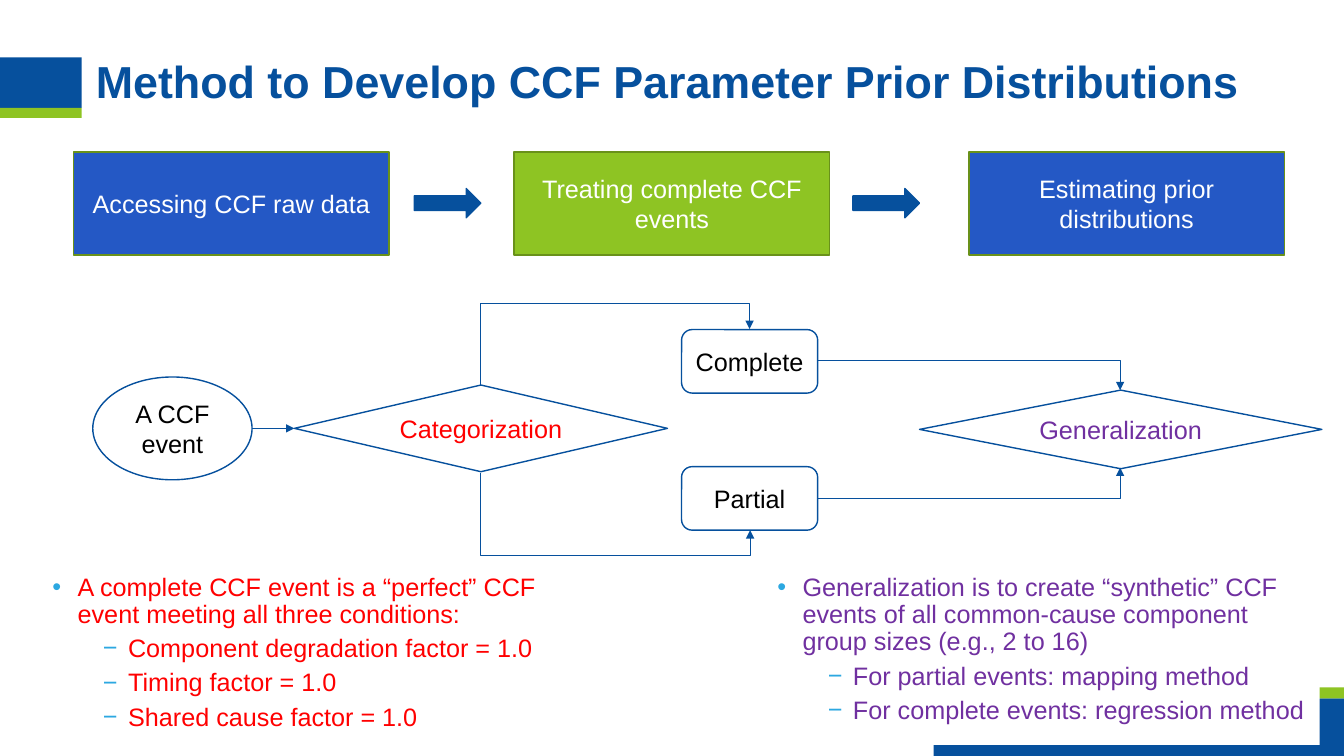
from lxml.etree import SubElement
from pptx import Presentation
from pptx.dml.color import RGBColor
from pptx.enum.shapes import MSO_CONNECTOR, MSO_SHAPE
from pptx.enum.text import MSO_ANCHOR, PP_ALIGN
from pptx.oxml.ns import qn
from pptx.util import Inches, Pt

BLUE, GREEN, ROYAL, OLIVE = "06509D", "8EC423", "2458C5", "69911A"
RED, PURPLE, BLACK, WHITE, SKY = "FF0000", "7030A0", "000000", "FFFFFF", "2CA8E1"


def rgb(color):
    return RGBColor.from_string(color)


def write(p, text, color, size=18, bold=False):
    r = p.add_run()
    r.text = text
    for name, value in {"name": "Arial", "size": Pt(size), "bold": bold}.items():
        setattr(r.font, name, value)
    r.font.color.rgb = rgb(color)


prs = Presentation()
prs.slide_width, prs.slide_height = Inches(13.33), Inches(7.5)
s = prs.slides.add_slide(prs.slide_layouts[1])
title, body = s.placeholders
frame_format = {"margin_left": 0, "margin_top": 0, "margin_right": Inches(0.1),
                "margin_bottom": Inches(0.05), "word_wrap": True}

# Shapes: kind, position, fill, line, text, text colour
rect, rounded = MSO_SHAPE.RECTANGLE, MSO_SHAPE.ROUNDED_RECTANGLE
diamond, arrow = MSO_SHAPE.FLOWCHART_DECISION, MSO_SHAPE.RIGHT_ARROW
shapes = [
    # Corner bars
    (rect, (9.26, 6.93, 4.07, 0.57), BLUE, None, "", None),
    (rect, (9.26, 6.82, 4.07, 0.11), GREEN, None, "", None),
    (rect, (0, 0.57, 0.81, 0.5), BLUE, None, "", None),
    (rect, (0, 1.07, 0.81, 0.1), GREEN, None, "", None),
    # Flowchart
    (MSO_SHAPE.OVAL, (0.92, 3.74, 1.58, 1.02), WHITE, BLUE, "A CCF event", BLACK),
    (rounded, (6.76, 3.27, 1.35, 0.63), WHITE, BLUE, "Complete", BLACK),
    (rounded, (6.76, 4.63, 1.35, 0.63), WHITE, BLUE, "Partial", BLACK),
    (diamond, (2.92, 3.82, 3.7, 0.86), WHITE, BLUE, "Categorization", RED),
    (diamond, (9.12, 3.87, 3.99, 0.78), WHITE, BLUE, "Generalization", PURPLE),
    # Process steps
    (rect, (0.73, 1.51, 3.13, 1.02), ROYAL, OLIVE, "Accessing CCF raw data", WHITE),
    (rect, (5.1, 1.51, 3.13, 1.02), GREEN, OLIVE, "Treating complete CCF events", WHITE),
    (rect, (9.61, 1.51, 3.13, 1.02), ROYAL, OLIVE, "Estimating prior distributions", WHITE),
    (arrow, (4.11, 1.87, 0.66, 0.29), BLUE, BLUE, "", None),
    (arrow, (8.46, 1.87, 0.66, 0.29), BLUE, BLUE, "", None),
]
for kind, box, fill, line, text, color in shapes:
    sp = s.shapes.add_shape(kind, *map(Inches, box))
    sp.shadow.inherit = False
    sp.fill.solid()
    sp.fill.fore_color.rgb = rgb(fill)
    if line:
        sp.line.color.rgb = rgb(line)
        sp.line.width = Pt(1)
    else:
        sp.line.fill.background()
    if text:
        tf = sp.text_frame
        tf.word_wrap = True
        tf.vertical_anchor = MSO_ANCHOR.MIDDLE
        tf.paragraphs[0].alignment = PP_ALIGN.CENTER
        write(tf.paragraphs[0], text, color)

# Connectors: preset, start and end before rotation, rotation, bend, width
connectors = [
    ("line", (2.5, 4.25, 2.92, 4.25), 0, None, 0.75),
    ("bentConnector3", (6.38, 4.88, 5.82, 2.21), 90, 1.45, 0.75),
    ("bentConnector3", (6.39, 3.64, 5.82, 6.31), 270, 1.44, 0.75),
    ("bentConnector2", (8.11, 3.58, 11.11, 3.87), 0, None, 0.5),
    ("bentConnector2", (8.11, 4.94, 11.11, 4.64), 0, None, 0.5),
]
for preset, ends, rotation, bend, width in connectors:
    kind = MSO_CONNECTOR.STRAIGHT if preset == "line" else MSO_CONNECTOR.ELBOW
    sp = s.shapes.add_connector(kind, *map(Inches, ends))
    sp.line.color.rgb = rgb(BLUE)
    sp.line.width = Pt(width)
    spPr = sp._element.spPr
    geom = spPr.find(qn("a:prstGeom"))
    geom.set("prst", preset)
    if rotation:
        spPr.find(qn("a:xfrm")).set("rot", str(rotation * 60000))
    if bend:
        SubElement(geom.find(qn("a:avLst")), qn("a:gd"), name="adj1",
                   fmla=f"val {round(bend * 100000)}")
    SubElement(spPr.find(qn("a:ln")), qn("a:tailEnd"), type="triangle")
    SubElement(spPr, qn("a:effectLst"))

# Title
title.left, title.top, title.width, title.height = map(Inches, (0.95, 0.59, 11.57, 0.54))
tf = title.text_frame
for name, value in frame_format.items():
    setattr(tf, name, value)
tf.vertical_anchor = MSO_ANCHOR.MIDDLE
p = tf.paragraphs[0]
p.alignment = PP_ALIGN.LEFT
p.line_spacing = 0.9
write(p, "Method to Develop CCF Parameter Prior Distributions", BLUE, 32, True)

# Bulleted notes
notes = s.shapes.add_textbox(0, 0, 0, 0)
notes.fill.solid()
notes.fill.fore_color.rgb = rgb(WHITE)
lists = [
    (body, (0.52, 5.7, 4.98, 1.69), RED, [
        "A complete CCF event is a “perfect” CCF event meeting all three conditions:",
        "Component degradation factor = 1.0",
        "Timing factor = 1.0",
        "Shared cause factor = 1.0"]),
    (notes, (7.71, 5.7, 5.38, 1.69), PURPLE, [
        "Generalization is to create “synthetic” CCF events of all common-cause "
        "component group sizes (e.g., 2 to 16)",
        "For partial events: mapping method",
        "For complete events: regression method"]),
]
for sp, box, color, items in lists:
    sp.left, sp.top, sp.width, sp.height = map(Inches, box)
    tf = sp.text_frame
    for name, value in frame_format.items():
        setattr(tf, name, value)
    tf.vertical_anchor = MSO_ANCHOR.TOP
    for i, text in enumerate(items):
        p = tf.add_paragraph() if i else tf.paragraphs[0]
        level = min(i, 1)
        p.level = level
        p.line_spacing = 0.9
        p.space_before = Pt(5 * level)
        pPr = p._p.get_or_add_pPr()
        pPr.set("marL", str(Inches(0.25 + 0.5 * level)))
        pPr.set("indent", str(Inches(-0.25)))
        SubElement(SubElement(pPr, qn("a:buClr")), qn("a:srgbClr"), val=SKY)
        SubElement(pPr, qn("a:buFont"), typeface="Arial")
        SubElement(pPr, qn("a:buChar"), char="•−"[level])
        write(p, text, color)

prs.save("out.pptx")
